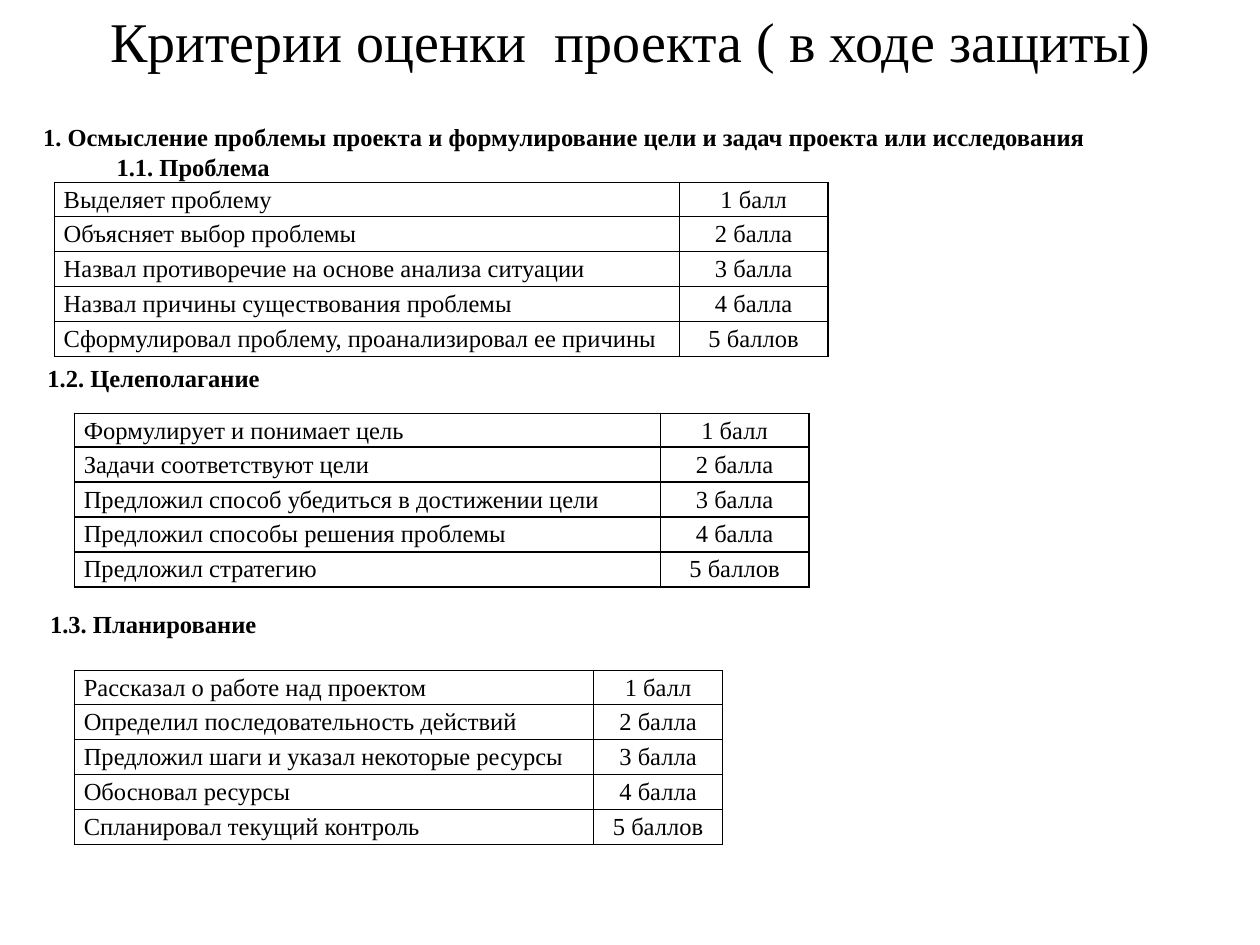
from lxml import etree
from pptx import Presentation
from pptx import util as u
from pptx.dml.color import RGBColor
from pptx.enum import text as t
from pptx.oxml import ns

BLACK = RGBColor(0, 0, 0)
FONT = "Times New Roman"
MARKS = ["1 балл", "2 балла", "3 балла", "4 балла", "5 баллов"]
HEADS = [
    (17.5, 66.2, 666, 41, ["1. Осмысление проблемы проекта и формулирование цели и задач проекта или исследования",
                           "1.1. Проблема"]),
    (20, 204, 689, 24.2, ["1.2. Целеполагание"]),
    (21.5, 344.2, 328, 24.2, ["1.3. Планирование"]),
]
GRIDS = [
    (31, 104.4, 357.2, 85, ["Выделяет проблему", "Объясняет выбор проблемы",
                            "Назвал противоречие на основе анализа ситуации",
                            "Назвал причины существования проблемы",
                            "Сформулировал проблему, проанализировал ее причины"]),
    (42.5, 236.2, 334.8, 85, ["Формулирует и понимает цель", "Задачи соответствуют цели",
                              "Предложил способ убедиться в достижении цели",
                              "Предложил способы решения проблемы", "Предложил стратегию"]),
    (42.5, 383.2, 296.8, 73.6, ["Рассказал о работе над проектом",
                                "Определил последовательность действий",
                                "Предложил шаги и указал некоторые ресурсы",
                                "Обосновал ресурсы", "Спланировал текущий контроль"]),
]


def write(par, words, size=14, bold=False, align=t.PP_ALIGN.JUSTIFY, line=None, after=None):
    """Put formatted words into a paragraph."""
    par.alignment = align
    if line:
        par.line_spacing = line
    if after:
        par.space_after = u.Pt(after)
    run = par.add_run()
    run.text = words
    run.font.name = FONT
    run.font.size = u.Pt(size)
    run.font.bold = bold
    run.font.color.rgb = BLACK


def add_text(slide, left, top, width, height, lines, **form):
    """Add a text box with one paragraph per line and return its frame."""
    box = slide.shapes.add_textbox(u.Pt(left), u.Pt(top), u.Pt(width), u.Pt(height))
    frame = box.text_frame
    frame.word_wrap = True
    frame.vertical_anchor = t.MSO_ANCHOR.MIDDLE
    for num, words in enumerate(lines):
        write(frame.add_paragraph() if num else frame.paragraphs[0], words, **form)
    return frame


def add_edge(cell):
    """Draw a thin black line on all four sides of a cell."""
    props = cell._tc.get_or_add_tcPr()
    for side in ("lnL", "lnR", "lnT", "lnB"):
        edge = etree.SubElement(props, ns.qn("a:" + side), w=str(u.Pt(1)))
        fill = etree.SubElement(edge, ns.qn("a:solidFill"))
        etree.SubElement(fill, ns.qn("a:srgbClr"), val=str(BLACK))


def fill_cell(cell, words, align):
    """Write and style one table cell."""
    cell.margin_left = cell.margin_right = u.Pt(5.4)
    cell.margin_top = cell.margin_bottom = 0
    write(cell.text_frame.paragraphs[0], words, align=align, line=1.15, after=10)
    add_edge(cell)
    cell.fill.background()


def add_grid(slide, left, top, wide, slim, goals):
    """Add a table of goals and their marks."""
    grid = slide.shapes.add_table(len(goals), 2, u.Pt(left), u.Pt(top),
                                  u.Pt(wide + slim), u.Pt(98)).table
    grid.first_row = grid.horz_banding = False
    grid.columns[0].width = u.Pt(wide)
    grid.columns[1].width = u.Pt(slim)
    for num, (goal, mark) in enumerate(zip(goals, MARKS)):
        grid.rows[num].height = u.Pt(20 if num else 18)
        fill_cell(grid.cell(num, 0), goal, t.PP_ALIGN.JUSTIFY)
        fill_cell(grid.cell(num, 1), mark, t.PP_ALIGN.CENTER)


def main():
    """Build the slide of project marking rules."""
    deck = Presentation()
    deck.slide_width, deck.slide_height = u.Pt(720), u.Pt(540)
    slide = deck.slides.add_slide(deck.slide_layouts[6])
    add_text(slide, 36.5, 9.4, 648, 27.4, ["Критерии оценки  проекта ( в ходе защиты)"],
             size=32, align=t.PP_ALIGN.CENTER)
    for grid in GRIDS:
        add_grid(slide, *grid)
    frames = [add_text(slide, *head, bold=True) for head in HEADS]
    frames[0].paragraphs[1]._p.get_or_add_pPr().set("marL", str(u.Pt(42)))
    deck.save("out.pptx")


if __name__ == "__main__":
    main()
